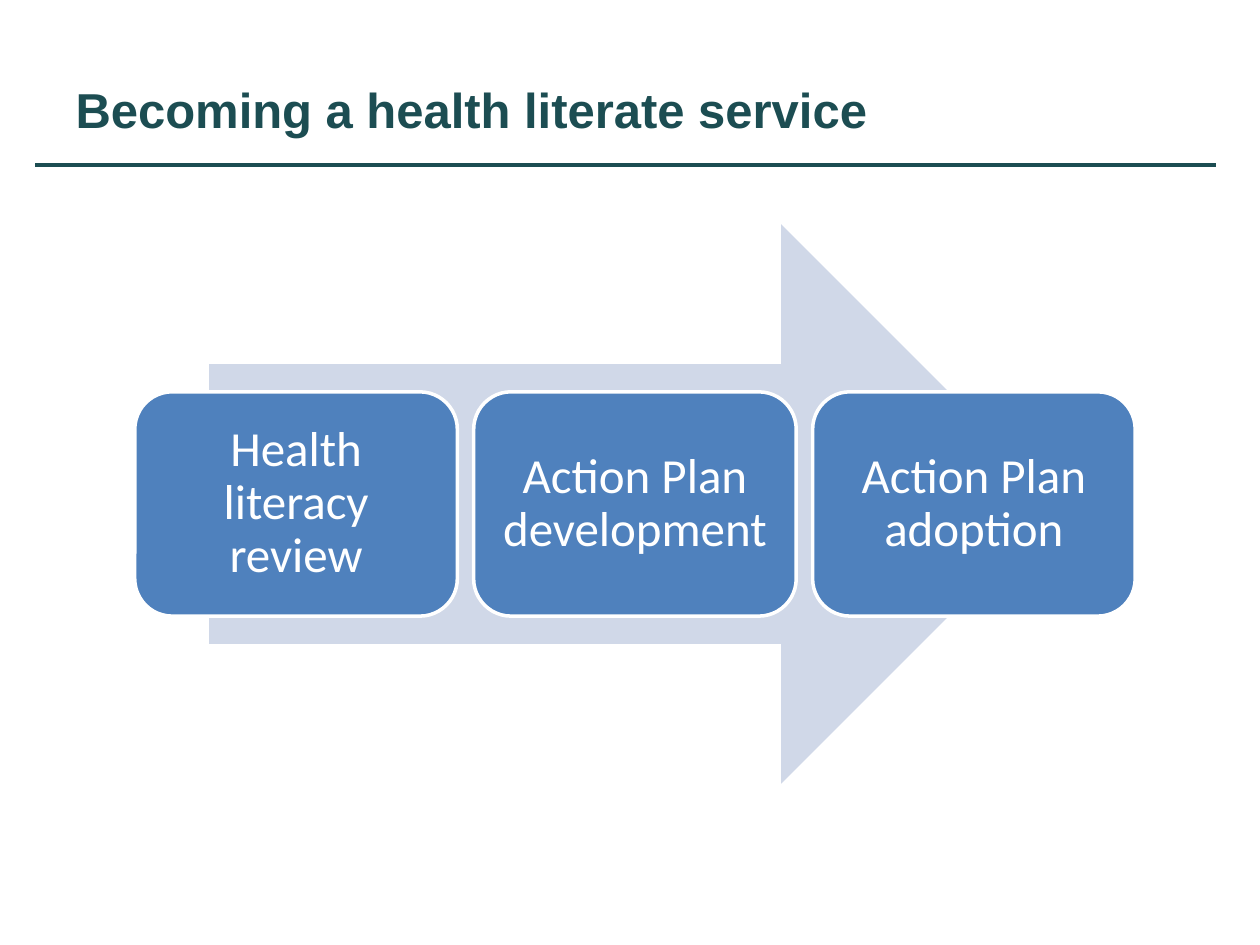
from pptx import Presentation
from pptx.dml.color import RGBColor as RGB
from pptx.enum.shapes import MSO_CONNECTOR as CONN, MSO_SHAPE as SHAPE
from pptx.enum.text import MSO_ANCHOR as ANCHOR, PP_ALIGN as ALIGN
from pptx.oxml.xmlchemy import OxmlElement
from pptx.util import Inches, Pt

COLORS = {"teal": "1C4D52", "pale": "D0D8E8", "blue": "4F81BD", "white": "FFFFFF"}
STEPS = ["Health literacy review", "Action Plan development", "Action Plan adoption"]


def tint(name):
    return RGB.from_string(COLORS[name])


def style(para, font, color, bold=False):
    para.font.name = font
    para.font.size = Pt(28)
    para.font.bold = bold
    para.font.color.rgb = tint(color)


def add_title(slide, text):
    title = slide.shapes.title
    title.left, title.top = Inches(0.5), Inches(0.3)
    title.width, title.height = Inches(9), Inches(0.85)
    frame = title.text_frame
    frame.text = text
    frame.vertical_anchor = ANCHOR.BOTTOM
    para = frame.paragraphs[0]
    para.alignment = ALIGN.LEFT
    style(para, "Arial", "teal", bold=True)


def add_rule(slide, left, right, top):
    rule = slide.shapes.add_connector(
        CONN.STRAIGHT, Inches(left), Inches(top), Inches(right), Inches(top))
    rule.line.color.rgb = tint("teal")
    rule.line.width = Pt(2.25)
    rule._element.spPr.append(OxmlElement("a:effectLst"))


def add_block(slide, kind, box, fill):
    block = slide.shapes.add_shape(kind, *map(Inches, box))
    block.shadow.inherit = False
    block.fill.solid()
    block.fill.fore_color.rgb = tint(fill)
    block.line.fill.background()
    return block


def add_step(slide, left, text):
    step = add_block(slide, SHAPE.ROUNDED_RECTANGLE, (left, 3.11, 2.56, 1.78), "blue")
    step.line.color.rgb = tint("white")
    step.line.width = Pt(2)
    frame = step.text_frame
    frame.text = text
    frame.word_wrap = True
    frame.vertical_anchor = ANCHOR.MIDDLE
    frame.margin_left = frame.margin_right = Inches(0.12)
    frame.margin_top = frame.margin_bottom = Inches(0.12)
    para = frame.paragraphs[0]
    para.alignment = ALIGN.CENTER
    para.line_spacing = 0.9
    style(para, "Calibri", "white")


def main():
    deck = Presentation()
    deck.slide_width, deck.slide_height = Inches(10), Inches(7.5)
    slide = deck.slides.add_slide(deck.slide_layouts[5])

    # Heading
    add_rule(slide, 0.28, 9.65, 1.31)
    add_title(slide, "Becoming a health literate service")

    # Process arrow with its steps
    add_block(slide, SHAPE.RIGHT_ARROW, (1.66, 1.78, 6.76, 4.44), "pale")
    for i, text in enumerate(STEPS):
        add_step(slide, 1.07 + 2.69 * i, text)

    deck.save("out.pptx")


if __name__ == "__main__":
    main()
